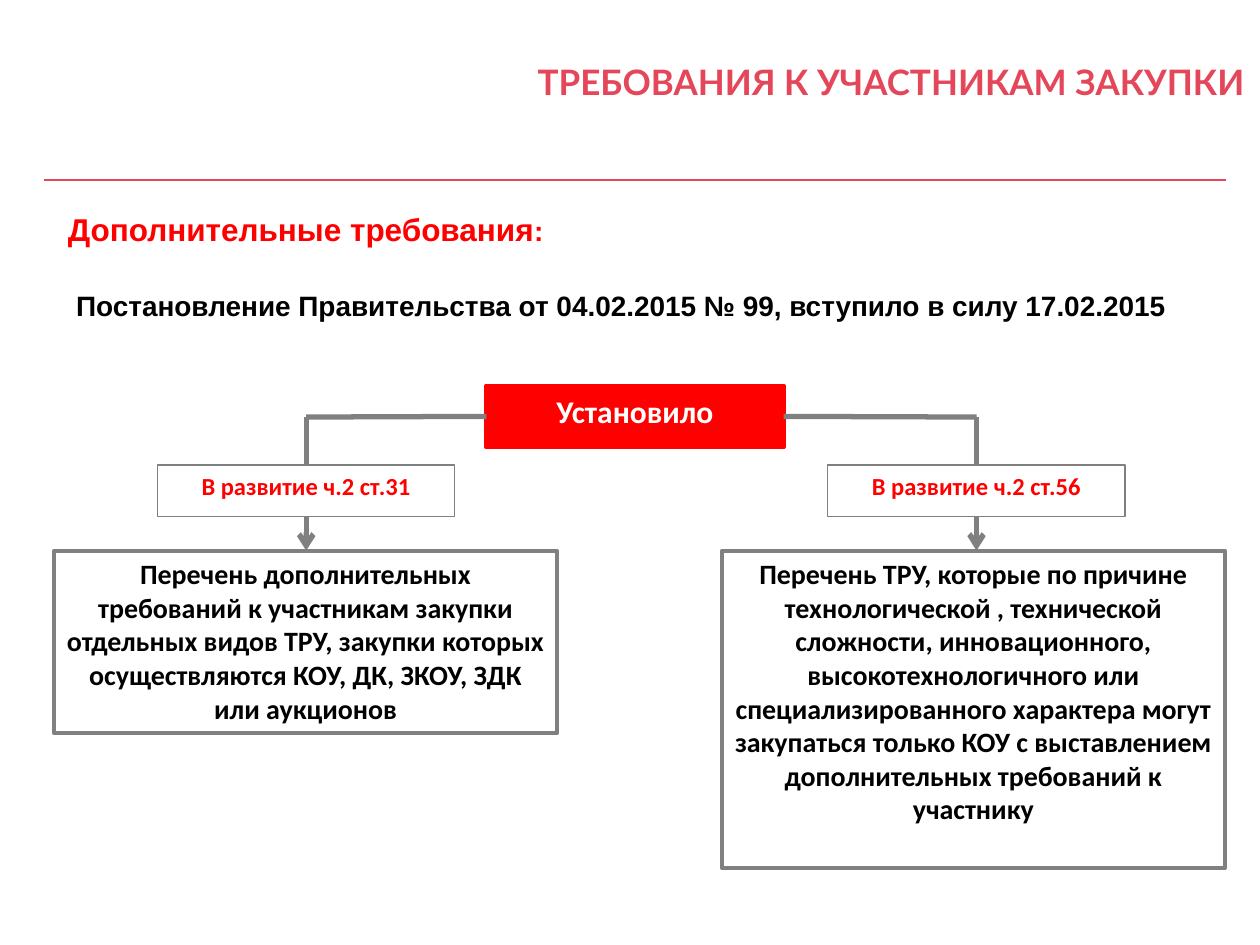
from lxml import etree
from pptx import Presentation
from pptx.dml.color import RGBColor
from pptx.enum.shapes import MSO_CONNECTOR, MSO_SHAPE
from pptx.enum.text import MSO_ANCHOR, PP_ALIGN
from pptx.oxml.ns import qn
from pptx.util import Inches, Pt

STRAIGHT = MSO_CONNECTOR.STRAIGHT
RECTANGLE = MSO_SHAPE.RECTANGLE
TOP = MSO_ANCHOR.TOP
CENTER, RIGHT = PP_ALIGN.CENTER, PP_ALIGN.RIGHT
CORAL, RED, GRAY, BLACK, WHITE = "E4465A", "FF0000", "808080", "000000", "FFFFFF"


def write(shape, text, size, color, font="Calibri", align=CENTER):
    frame = shape.text_frame
    frame.word_wrap = True
    frame.vertical_anchor = TOP
    para = frame.paragraphs[0]
    para.text = text
    para.alignment = align
    para.font.name = font
    para.font.size = Pt(size)
    para.font.bold = True
    para.font.color.rgb = RGBColor.from_string(color)
    return para


def draw_line(x1, y1, x2, y2, color=GRAY, width=3, arrow=False):
    line = slide.shapes.add_connector(
        STRAIGHT, Inches(x1), Inches(y1), Inches(x2), Inches(y2))
    line.line.color.rgb = RGBColor.from_string(color)
    line.line.width = Pt(width)
    properties = line._element.spPr
    if arrow:
        etree.SubElement(properties.find(qn("a:ln")), qn("a:tailEnd"), type="arrow")
    etree.SubElement(properties, qn("a:effectLst"))
    return line


deck = Presentation()
deck.slide_width, deck.slide_height = Inches(10), Inches(7.5)
slide = deck.slides.add_slide(deck.slide_layouts[5])

# Title and rule
title = slide.shapes.title
title.left, title.top = Inches(2.82), Inches(0.36)
title.width, title.height = Inches(7.16), Inches(0.99)
para = write(title, "ТРЕБОВАНИЯ К УЧАСТНИКАМ ЗАКУПКИ", 20, CORAL, "Lato", RIGHT)
para.line_spacing = 1.2
draw_line(0.35, 1.43, 9.73, 1.43, CORAL, 1.5)

# Subheading with a smaller colon
subheading = slide.shapes.add_textbox(Inches(0.32), Inches(1.62), Inches(4.09), Inches(0.4))
para = write(subheading, "Дополнительные требования", 18, RED, "Arial", RIGHT)
colon = para.add_run()
colon.text = ":"
colon.font.size = Pt(16)

# Decree
decree = slide.shapes.add_textbox(Inches(0.03), Inches(2.24), Inches(9.8), Inches(0.37))
write(decree, "Постановление Правительства от 04.02.2015 № 99, вступило в силу 17.02.2015",
      16, BLACK, "Arial")

# Boxes: left, top, width, height, text, size, text colour, fill, line colour, line width
boxes = []
for left, top, width, height, text, size, color, fill, border, weight in [
    (3.86, 3.06, 2.36, 0.49, "Установило", 18, WHITE, RED, RED, 2.25),
    (1.25, 3.69, 2.36, 0.41, "В развитие ч.2 ст.31", 14, RED, None, GRAY, 0.75),
    (6.57, 3.69, 2.36, 0.41, "В развитие ч.2 ст.56", 14, RED, None, GRAY, 0.75),
    (0.43, 4.37, 3.99, 1.45,
     "Перечень дополнительных требований к участникам закупки отдельных видов ТРУ, "
     "закупки которых осуществляются КОУ, ДК, ЗКОУ, ЗДК или аукционов",
     16, BLACK, None, GRAY, 2.25),
    (5.73, 4.37, 3.99, 2.52,
     "Перечень ТРУ, которые по причине технологической , технической сложности, "
     "инновационного, высокотехнологичного или специализированного характера могут "
     "закупаться только КОУ с выставлением дополнительных требований к участнику",
     16, BLACK, None, GRAY, 2.25),
]:
    box = slide.shapes.add_shape(
        RECTANGLE, Inches(left), Inches(top), Inches(width), Inches(height))
    box.shadow.inherit = False
    if fill:
        box.fill.solid()
        box.fill.fore_color.rgb = RGBColor.from_string(fill)
    else:
        box.fill.background()
    box.line.color.rgb = RGBColor.from_string(border)
    box.line.width = Pt(weight)
    write(box, text, size, color)
    boxes.append(box)
source, left_label, right_label = boxes[:3]

# Branches: across from the source, down to the label, arrow to the list
for label, side, edge, center in [(left_label, 1, 3.86, 2.43), (right_label, 3, 6.22, 7.75)]:
    across = draw_line(edge, 3.31, center, 3.31)
    across.begin_connect(source, side)
    down = draw_line(center, 3.31, center, 3.69)
    down.end_connect(label, 0)
    arrow = draw_line(center, 4.1, center, 4.37, arrow=True)
    arrow.begin_connect(label, 2)

deck.save("out.pptx")
